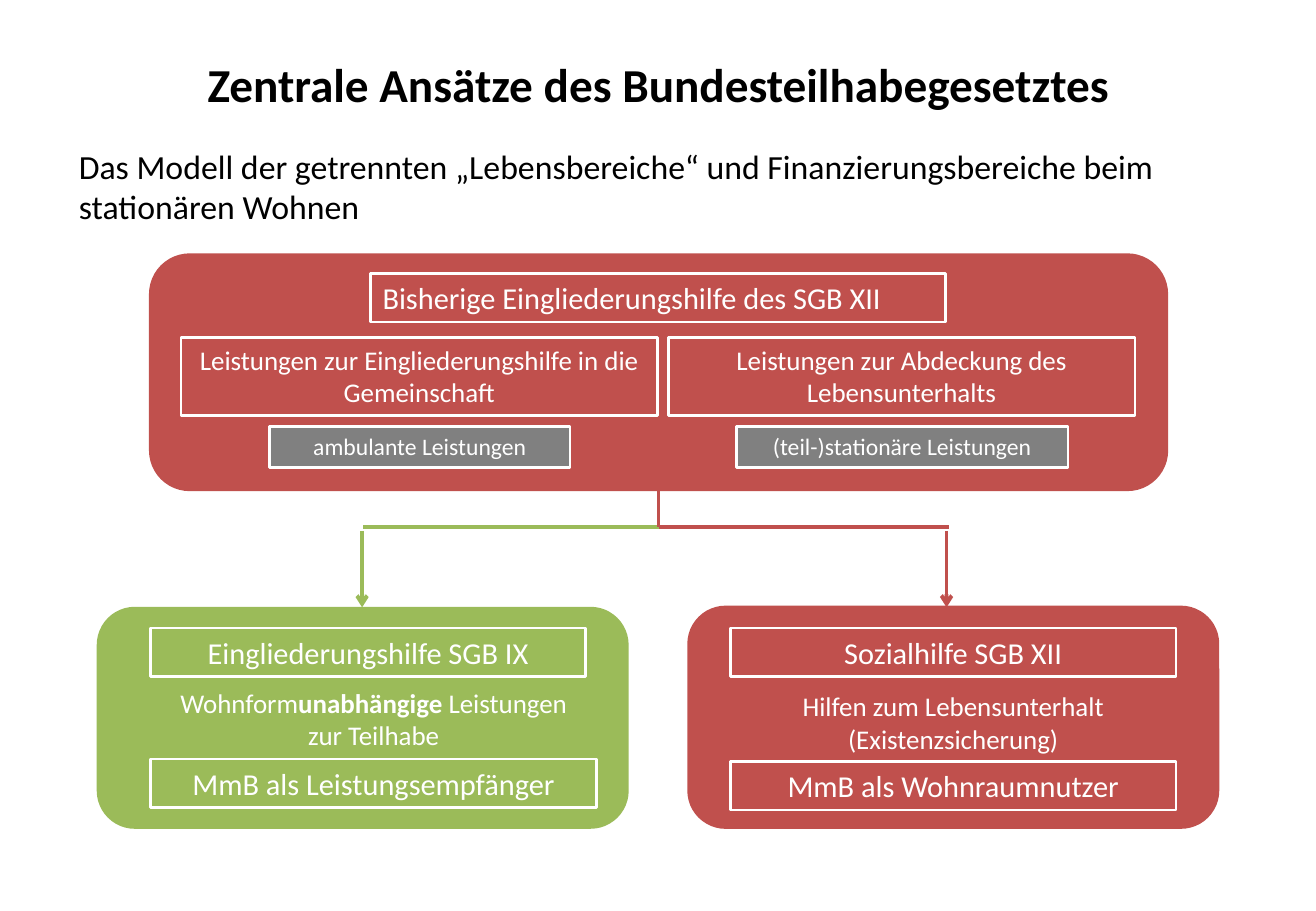
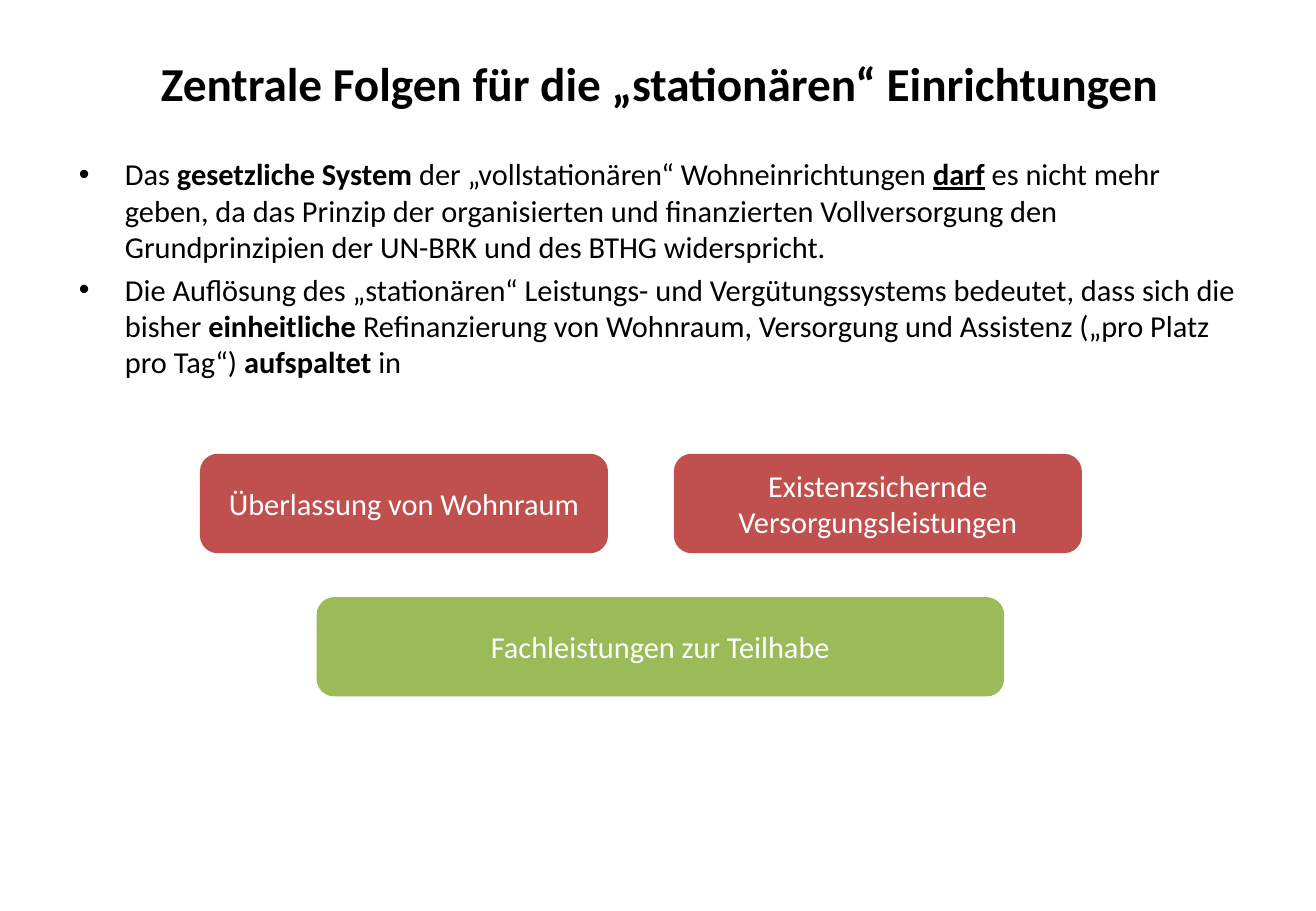
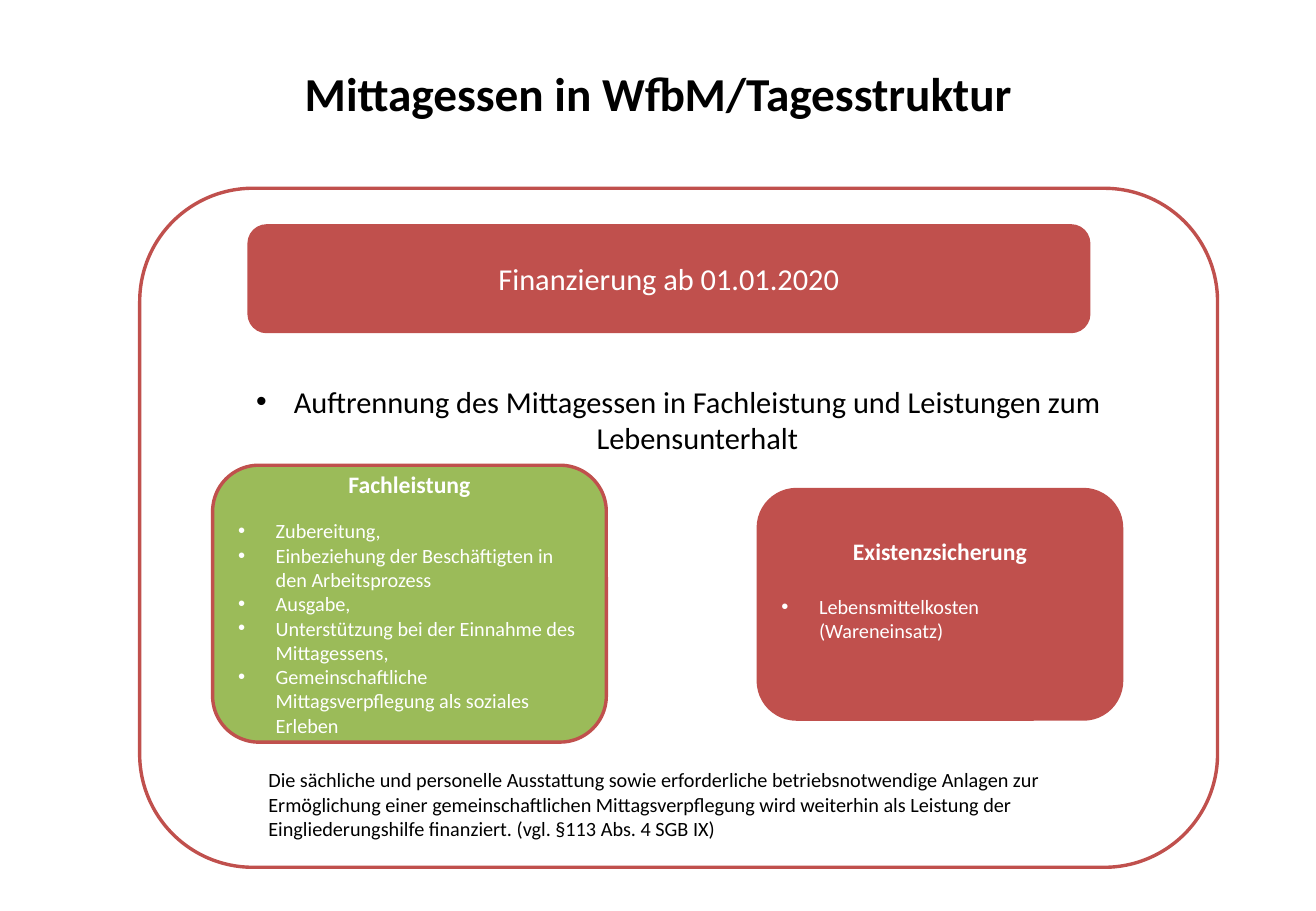
"""Three slides on the German participation law and its effect on residential care."""
import lxml.etree
import pptx
import pptx.dml.color
import pptx.enum.shapes
import pptx.enum.text
import pptx.oxml.ns
import pptx.util

RGB = pptx.dml.color.RGBColor
SHAPE = pptx.enum.shapes.MSO_SHAPE
ANCHOR = pptx.enum.text.MSO_ANCHOR
ALIGN = pptx.enum.text.PP_ALIGN
Pt = pptx.util.Pt

PX = 9144
FONT = "Calibri"
BLACK, WHITE = RGB(0, 0, 0), RGB(255, 255, 255)
RED, GREEN, GRAY = RGB(0xC0, 0x50, 0x4D), RGB(0x9B, 0xBB, 0x59), RGB(0x80, 0x80, 0x80)
BOLD = {"bold": True}
TOP, MIDDLE = {"vertical_anchor": ANCHOR.TOP}, {"vertical_anchor": ANCHOR.MIDDLE}
CENTER, LEFT = {"alignment": ALIGN.CENTER}, {"alignment": ALIGN.LEFT}

TITLES = [
    ("Zentrale Ansätze des Bundesteilhabegesetztes", (54, 30, 975, 77)),
    ("Zentrale Folgen für die „stationären“ Einrichtungen", (55, 21, 975, 94)),
    ("Mittagessen in WfbM/Tagesstruktur", (54, 30, 975, 93)),
]

MODEL_INTRO = ("Das Modell der getrennten „Lebensbereiche“ und "
               "Finanzierungsbereiche beim stationären Wohnen")
MODEL_CARDS = [
    ((124, 210, 836, 193), RED),
    ((81, 501, 435, 180), GREEN),
    ((567, 500, 435, 181), RED),
]
MODEL_LINES = [
    ((542, 434), (299, 434), GREEN, False),
    ((542, 403), (542, 434), RED, False),
    ((542, 434), (781, 434), RED, False),
    ((298, 437), (298, 500), GREEN, True),
    ((779, 437), (779, 500), RED, True),
]
MODEL_LABELS = [
    ("Bisherige Eingliederungshilfe des SGB XII", (305, 225, 473, 40), 18, None, LEFT),
    ("Leistungen zur Eingliederungshilfe in die Gemeinschaft",
     (149, 278, 392, 64), 16, None, CENTER),
    ("Leistungen zur Abdeckung des Lebensunterhalts", (550, 278, 384, 64), 16, None, CENTER),
    ("ambulante Leistungen", (222, 351, 247, 34), 14, GRAY, CENTER),
    ("(teil-)stationäre Leistungen", (606, 351, 273, 34), 14, GRAY, CENTER),
    ("Eingliederungshilfe SGB IX", (124, 517, 358, 40), 18, None, CENTER),
    ("MmB als Leistungsempfänger", (124, 625, 367, 40), 18, None, CENTER),
    ("Sozialhilfe SGB XII", (601, 517, 367, 40), 18, None, CENTER),
    ("MmB als Wohnraumnutzer", (601, 627, 367, 40), 18, None, CENTER),
]
MODEL_NOTES = [
    ([("Wohnform", {}), ("unabhängige", BOLD), (" Leistungen zur Teilhabe", {})],
     (124, 560, 367, 64)),
    ("Hilfen zum Lebensunterhalt (Existenzsicherung)", (601, 563, 367, 64)),
]

EFFECTS = [
    [("Das ", {}), ("gesetzliche System", BOLD),
     (" der „vollstationären“ Wohneinrichtungen ", {}),
     ("darf", {"bold": True, "underline": True}),
     (" es nicht mehr geben, da das Prinzip der organisierten und finanzierten "
      "Vollversorgung den Grundprinzipien der UN-BRK und des BTHG widerspricht.", {})],
    [("Die Auflösung des „stationären“ Leistungs- und Vergütungssystems bedeutet, "
      "dass sich die bisher ", {}), ("einheitliche", BOLD),
     (" Refinanzierung von Wohnraum, Versorgung und Assistenz "
      "(„pro Platz pro Tag“) ", {}), ("aufspaltet", BOLD), (" in", {})],
]
EFFECT_CARDS = [
    ("Überlassung von Wohnraum", (166, 375, 333, 79), RED),
    ("Existenzsichernde Versorgungsleistungen", (556, 375, 333, 79), RED),
    ("Fachleistungen zur Teilhabe", (262, 493, 563, 79), GREEN),
]

LUNCH_SPLIT = "Auftrennung des Mittagessen in Fachleistung und Leistungen zum Lebensunterhalt"
LUNCH_HEAD = "Finanzierung ab 01.01.2020"
LUNCH_CARDS = [
    ("Fachleistung",
     ["Zubereitung,", "Einbeziehung der Beschäftigten in den Arbeitsprozess", "Ausgabe,",
      "Unterstützung bei der Einnahme des Mittagessens,",
      "Gemeinschaftliche Mittagsverpflegung als soziales Erleben"],
     (175, 383, 324, 228), GREEN, 12, 5),
    ("Existenzsicherung", ["Lebensmittelkosten (Wareneinsatz)"],
     (624, 403, 299, 189), RED, 17, 29),
]
LUNCH_NOTE = ("Die sächliche und personelle Ausstattung sowie erforderliche betriebsnotwendige "
              "Anlagen zur Ermöglichung einer gemeinschaftlichen Mittagsverpflegung wird "
              "weiterhin als Leistung der Eingliederungshilfe finanziert. "
              "(vgl. §113 Abs. 4 SGB IX)")


def px(values):
    return [pptx.util.Emu(v * PX) for v in values]


def apply(obj, fmt):
    for name, value in fmt.items():
        setattr(obj, name, value)


def add_xml(parent, tag, **attrs):
    return lxml.etree.SubElement(parent, pptx.oxml.ns.qn(tag), attrs)


def para(text, size, color=WHITE, fmt=CENTER, bullet=0, font=None):
    runs = [(text, {})] if isinstance(text, str) else text
    return {"runs": runs, "size": size, "color": color, "fmt": fmt,
            "bullet": bullet, "font": font or {}}


def write(tf, paras, frame_fmt):
    apply(tf, {"word_wrap": True, "auto_size": pptx.enum.text.MSO_AUTO_SIZE.NONE, **frame_fmt})
    for i, item in enumerate(paras):
        p = tf.add_paragraph() if i else tf.paragraphs[0]
        apply(p, item["fmt"])
        if item["bullet"]:
            ppr = p._p.get_or_add_pPr()
            indent = item["bullet"] * PX
            ppr.set("marL", str(indent))
            ppr.set("indent", str(-indent))
            add_xml(ppr, "a:buFont", typeface="Arial")
            add_xml(ppr, "a:buChar", char="•")
        for text, fmt in item["runs"]:
            r = p.add_run()
            r.text = text
            base = {"name": FONT, "size": Pt(item["size"]), "bold": False}
            apply(r.font, {**base, **item["font"], **fmt})
            r.font.color.rgb = item["color"]


def add_box(s, kind, at, fill, line, width, paras=(), frame_fmt=MIDDLE):
    sp = s.shapes.add_shape(kind, *px(at))
    sp.shadow.inherit = False
    if fill is None:
        sp.fill.background()
    else:
        sp.fill.solid()
        sp.fill.fore_color.rgb = fill
    sp.line.color.rgb = line
    sp.line.width = Pt(width)
    write(sp.text_frame, paras, frame_fmt)


def add_card(s, at, fill, paras=(), line=None, frame_fmt=MIDDLE):
    add_box(s, SHAPE.ROUNDED_RECTANGLE, at, fill, line or fill, 2, paras, frame_fmt)


def add_text(s, at, paras):
    write(s.shapes.add_textbox(*px(at)).text_frame, paras, TOP)


def add_line(s, start, end, color, arrow):
    c = s.shapes.add_connector(pptx.enum.shapes.MSO_CONNECTOR.STRAIGHT, *px(start + end))
    c.line.color.rgb = color
    c.line.width = Pt(2.25)
    if arrow:
        add_xml(c.line._get_or_add_ln(), "a:tailEnd", type="arrow")
    add_xml(c._element.spPr, "a:effectLst")


def add_slide(prs, title, at):
    s = prs.slides.add_slide(prs.slide_layouts[5])
    sp = s.shapes.title
    apply(sp, dict(zip(("left", "top", "width", "height"), px(at))))
    write(sp.text_frame, [para(title, 28, BLACK, font=BOLD)], MIDDLE)
    return s


def build_model(s):
    add_text(s, (55, 115, 975, 90), [para(MODEL_INTRO, 20, BLACK, LEFT)])
    for at, fill in MODEL_CARDS:
        add_card(s, at, fill)
    for line in MODEL_LINES:
        add_line(s, *line)
    for text, at, size, fill, align in MODEL_LABELS:
        add_box(s, SHAPE.RECTANGLE, at, fill, WHITE, 1.5, [para(text, size, fmt=align)], TOP)
    for text, at in MODEL_NOTES:
        add_text(s, at, [para(text, 16)])


def build_effects(s):
    spacing = [LEFT, {**LEFT, "space_before": Pt(3.6)}]
    add_text(s, (55, 123, 975, 220),
             [para(runs, 18, BLACK, fmt, 38) for runs, fmt in zip(EFFECTS, spacing)])
    for text, at, fill in EFFECT_CARDS:
        add_card(s, at, fill, [para(text, 18)])


def build_lunch(s):
    add_card(s, (115, 155, 887, 559), WHITE, [para(LUNCH_SPLIT, 18, BLACK, bullet=31)], RED,
             {**TOP, "margin_top": 133 * PX})
    add_card(s, (205, 186, 691, 87), RED, [para(LUNCH_HEAD, 18)])
    for head, items, at, fill, gap, bottom in LUNCH_CARDS:
        paras = [para(head, 14, fmt={**CENTER, "space_after": Pt(gap)}, font=BOLD)]
        paras += [para(item, 12, fmt=LEFT, bullet=31) for item in items]
        add_card(s, at, fill, paras, RED, {**MIDDLE, "margin_bottom": bottom * PX})
    add_text(s, (211, 627, 695, 71), [para(LUNCH_NOTE, 12, BLACK, LEFT)])


def main():
    prs = pptx.Presentation()
    prs.slide_width, prs.slide_height = px((1083, 750))
    for (title, at), build in zip(TITLES, (build_model, build_effects, build_lunch)):
        build(add_slide(prs, title, at))
    prs.save("out.pptx")


if __name__ == "__main__":
    main()
